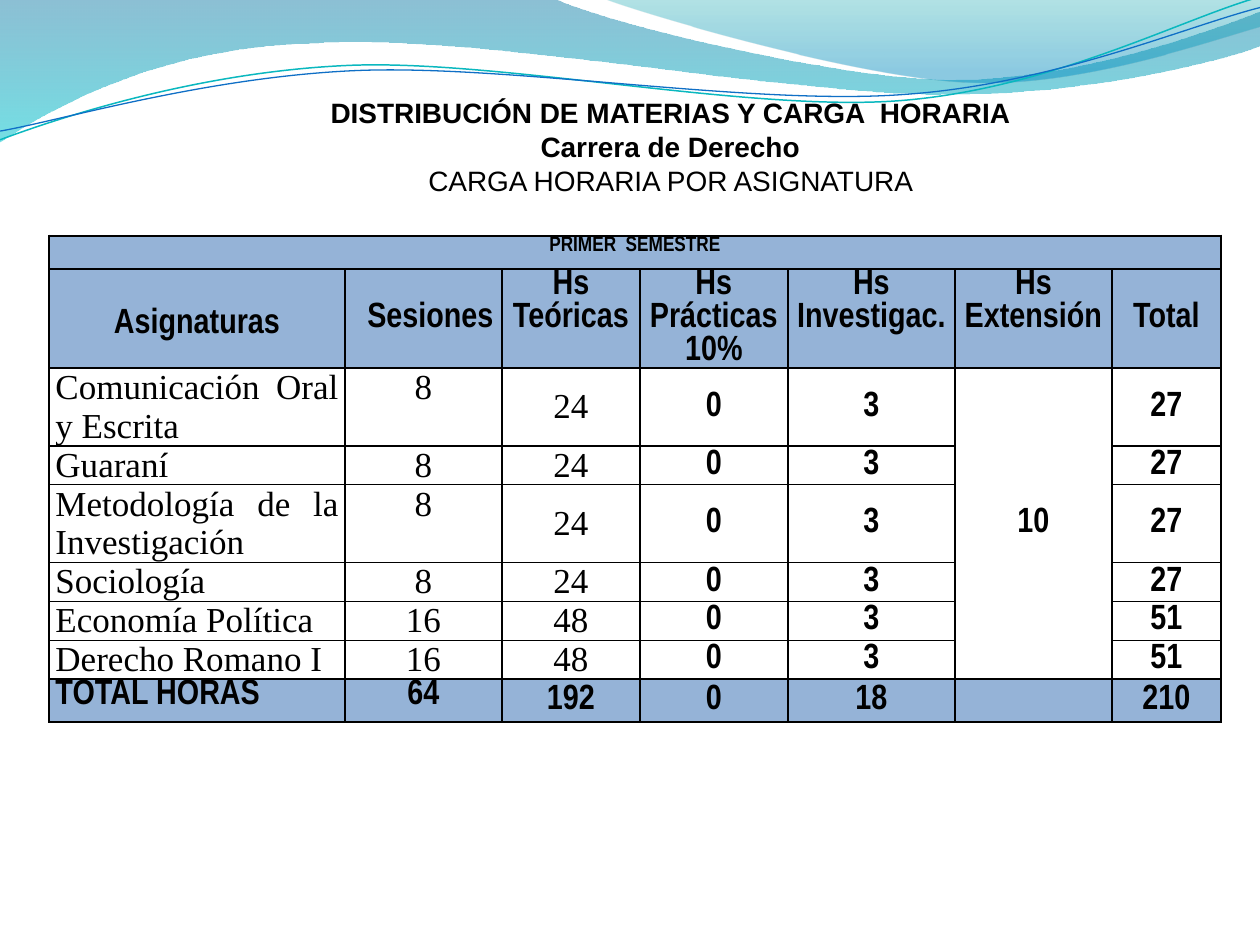
from lxml.etree import SubElement
from pptx import Presentation
from pptx.dml.color import RGBColor
from pptx.enum.text import MSO_ANCHOR as Anchor, MSO_AUTO_SIZE as Fit, PP_ALIGN as Align
from pptx.oxml.ns import qn
from pptx.util import Pt

TITLE = ["DISTRIBUCIÓN DE MATERIAS Y CARGA  HORARIA ", "Carrera de Derecho ",
         "CARGA HORARIA POR ASIGNATURA "]
TERM = "PRIMER  SEMESTRE"
HEADS = ["Asignaturas", "Sesiones", "Hs Teóricas", "Hs Prácticas\n10%",
         "Hs\nInvestigac.", "Hs\nExtensión", "Total"]
COURSES = [
    ("Comunicación Oral y Escrita", "8", "24", "0", "3", "10", "27"),
    ("Guaraní", "8", "24", "0", "3", "", "27"),
    ("Metodología de la Investigación", "8", "24", "0", "3", "", "27"),
    ("Sociología", "8", "24", "0", "3", "", "27"),
    ("Economía Política", "16", "48", "0", "3", "", "51"),
    ("Derecho Romano I", "16", "48", "0", "3", "", "51"),
]
SUMS = ("TOTAL HORAS", "64", "192", "0", "18", "", "210")
ROWS = [[TERM] + [""] * 6, HEADS, *COURSES, SUMS]
LAST = len(ROWS) - 1
WIDTHS = [169, 89.8, 78.8, 84.6, 95.5, 89.7, 62.2]
LINE = 22.2
HEIGHTS = [18.9, 56.7, 2 * LINE, LINE, 2 * LINE, LINE, LINE, LINE, 24.6]
HEAD_TOPS = {0: LINE, 1: 18.9, 6: 18.9}
BLUE, BLACK = "95B3D7", "000000"

# A pair is a straight step, six numbers are a Bézier curve.
BANDS = [
    ([(0, 0), (316.8, -0.7), (342.7, 12.2, 478.1, 45.4, 545.8, 45.4),
      (614.2, 45.4, 689.8, 18.7, 720, 6.5), (720.7, 25.9),
      (707.8, 31.7, 626.4, 54.7, 537.1, 54), (447.8, 54, 275, 20.2, 185, 24.5),
      (92.9, 25.9, 33.1, 59.8, -0.7, 81.4), (0, 0)],
     [(0, "0074A1", 45), (1, "00C6CF", 55)]),
    ([(344.9, -0.7), (366.5, 7.9, 491, 44.6, 553.7, 46.8),
      (616.3, 49.7, 691.9, 23, 720, 15.1), (720, 0), (344.9, -0.7)],
     [(0, "00A1A9", 30), (0.8, "008BBF", 45)]),
]
WAVES = [
    ([(0, 79.9), (34.6, 67, 113.8, 41, 199.4, 37.4),
      (284.4, 33.8, 427, 64.1, 513.4, 57.6),
      (599.8, 51.1, 675.4, 10.8, 718.6, -1.4)], "0AB8BF", 0.85),
    ([(0, 74.9), (33.8, 69.1, 118.1, 43.9, 203.8, 40.3),
      (290.2, 36.7, 429.8, 60.5, 516.2, 54),
      (601.9, 48.2, 677.5, 15.1, 720, 4.3)], "0F6FC6", 0.75),
]


def rgb(code):
    return RGBColor.from_string(code)


def draw(slide, steps, close):
    """Build an outline, then turn each three-point step into one curve."""
    dots = [(Pt(step[i]), Pt(step[i + 1]))
            for step in steps for i in range(0, len(step), 2)]
    pen = slide.shapes.build_freeform(*dots[0])
    pen.add_line_segments(dots[1:], close=close)
    shape = pen.convert_to_shape()
    shape.shadow.inherit = False
    lines = iter(list(shape._element.iter(qn("a:lnTo"))))
    for step in steps[1:]:
        first = next(lines)
        if len(step) == 6:
            first.tag = qn("a:cubicBezTo")
            for _ in range(2):
                extra = next(lines)
                first.append(extra[0])
                extra.getparent().remove(extra)
    return shape


def add_band(slide, steps, stops):
    shape = draw(slide, steps, True)
    shape.line.fill.background()
    fill = shape.fill
    fill.gradient()
    fill.gradient_angle = 270
    for stop, (pos, code, _) in zip(fill.gradient_stops, stops):
        stop.position = pos
        stop.color.rgb = rgb(code)
    tags = shape._element.spPr.iter(qn("a:srgbClr"))
    for tag, (_, _, alpha) in zip(tags, stops):
        SubElement(tag, qn("a:alpha"), val=str(alpha * 1000))


def add_wave(slide, steps, code, width):
    shape = draw(slide, steps, False)
    shape.fill.background()
    shape.line.color.rgb = rgb(code)
    shape.line.width = Pt(width)


def style(para, font, size, bold, align):
    para.alignment = align
    for run in para.runs:
        run.font.name, run.font.size, run.font.bold = font, Pt(size), bold
        run.font.color.rgb = rgb(BLACK)


def add_title(slide):
    box = slide.shapes.title
    box.left, box.top, box.width, box.height = Pt(118.1), Pt(50.4), Pt(534.2), Pt(94.3)
    frame = box.text_frame
    frame.text = "\n".join(TITLE)
    frame.auto_size, frame.vertical_anchor = Fit.NONE, Anchor.TOP
    frame.margin_top = Pt(4.4)
    for i, para in enumerate(frame.paragraphs):
        style(para, "Arial", 16, i < 2, Align.CENTER)


def add_borders(cell, r, c):
    edges = {"L": c == 0, "R": c == 6 or r == 0,
             "T": r in (0, 2), "B": r == 1}
    props = cell._tc.get_or_add_tcPr()
    for i, (side, thick) in enumerate(edges.items()):
        line = SubElement(props, qn("a:ln" + side), w=str(Pt(1.5 if thick else 1)))
        fill = SubElement(line, qn("a:solidFill"))
        SubElement(fill, qn("a:srgbClr"), val=BLACK)
        props.insert(i, line)


def fill_cell(cell, r, c, text):
    course = 2 <= r < LAST
    cell.text = text
    cell.margin_left = Pt(11.6 if (r, c) == (1, 1) else 3.6)
    cell.margin_right = Pt(3.6)
    cell.margin_top = Pt(HEAD_TOPS.get(c, 0) if r == 1 else 0)
    cell.margin_bottom = 0
    cell.vertical_anchor = Anchor.MIDDLE if r >= 2 and c >= 2 else Anchor.TOP
    if course:
        cell.fill.background()
    else:
        cell.fill.solid()
        cell.fill.fore_color.rgb = rgb(BLUE)
    serif = course and c < 3
    align = Align.CENTER
    if c == 0 and r >= 2:
        align = Align.JUSTIFY if course else Align.LEFT
    for para in cell.text_frame.paragraphs:
        style(para, "Times New Roman" if serif else "Arial Narrow",
              20 if r else 12, not serif, align)
    add_borders(cell, r, c)


def add_grid(slide):
    frame = slide.shapes.add_table(len(ROWS), len(WIDTHS), Pt(28.1), Pt(134.8),
                                   Pt(sum(WIDTHS)), Pt(sum(HEIGHTS)))
    table = frame.table
    table.first_row = table.horz_banding = False
    for col, width in zip(table.columns, WIDTHS):
        col.width = Pt(width)
    for row, height in zip(table.rows, HEIGHTS):
        row.height = Pt(height)
    for r, row in enumerate(ROWS):
        for c, text in enumerate(row):
            fill_cell(table.cell(r, c), r, c, text)
    table.cell(0, 0).merge(table.cell(0, 6))
    table.cell(2, 5).merge(table.cell(LAST - 1, 5))


def main():
    deck = Presentation()
    deck.slide_width, deck.slide_height = Pt(720), Pt(540)
    slide = deck.slides.add_slide(deck.slide_layouts[5])
    for band in BANDS:
        add_band(slide, *band)
    for wave in WAVES:
        add_wave(slide, *wave)
    add_grid(slide)
    add_title(slide)
    deck.save("out.pptx")


if __name__ == "__main__":
    main()
